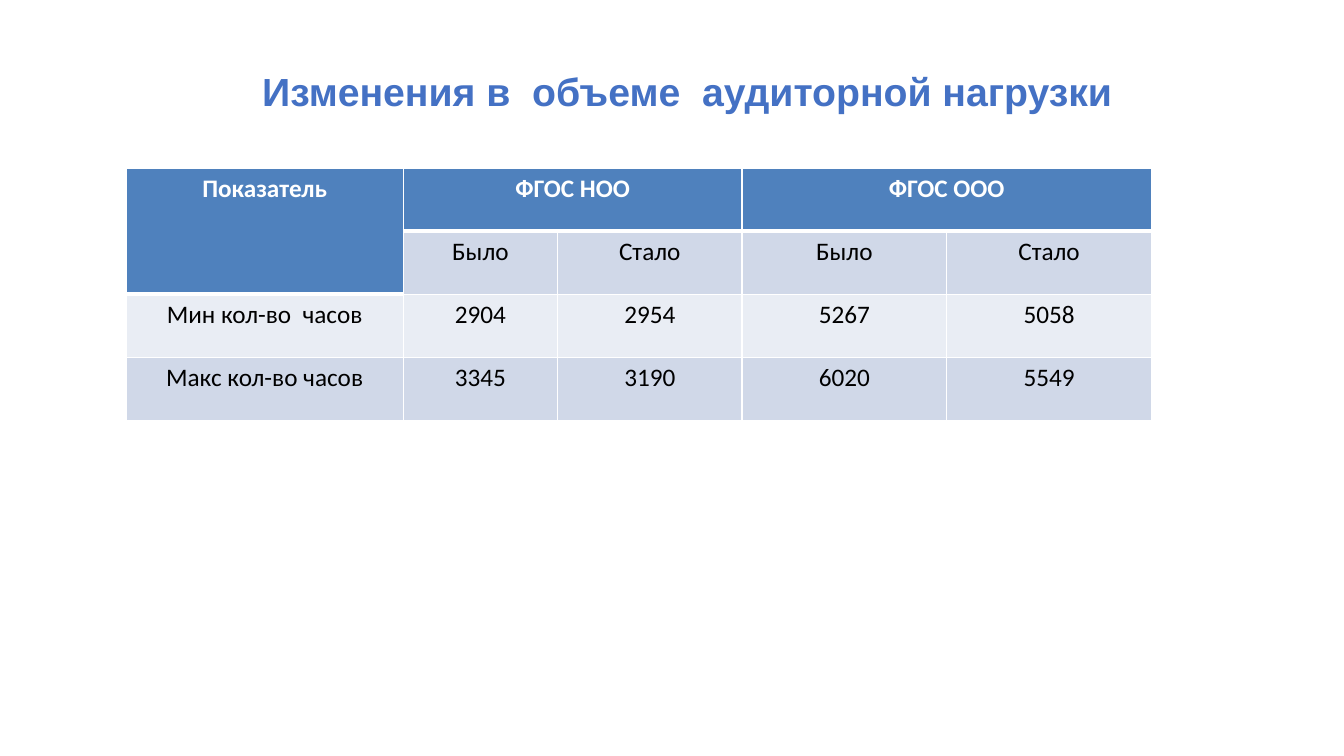
from dataclasses import dataclass

from lxml import etree
from pptx import Presentation
from pptx.dml.color import RGBColor
from pptx.enum.text import PP_ALIGN
from pptx.oxml.ns import qn
from pptx.util import Inches, Pt

CENTER = PP_ALIGN.CENTER


@dataclass(frozen=True)
class Theme:
    title_font: str = "Arial"
    table_font: str = "Calibri"
    title_size: int = 28
    table_size: int = 18
    title_color: str = "4471C4"
    header_fill: str = "4F81BD"
    header_text: str = "FFFFFF"
    body_text: str = "000000"
    band_fills: tuple = ("E9EDF4", "D0D8E8")
    border_color: str = "FFFFFF"
    border_width: int = 1
    header_border_width: int = 3


THEME = Theme()

TITLE = "Изменения в  объеме  аудиторной нагрузки"
COLUMN_WIDTHS = (2.75, 1.53, 1.83, 2.03, 2.03)
ROW_HEIGHT = 0.625
ROWS = (
    ("Показатель", "ФГОС НОО", "", "ФГОС ООО", ""),
    ("", "Было", "Стало", "Было", "Стало"),
    ("Мин кол-во  часов", "2904", "2954", "5267", "5058"),
    ("Макс кол-во часов", "3345", "3190", "6020", "5549"),
)
# First and last cell of each merged header block
MERGES = (((0, 0), (1, 0)), ((0, 1), (0, 2)), ((0, 3), (0, 4)))


def style_paragraph(paragraph, font_name, size, color, bold):
    paragraph.alignment = CENTER
    for run in paragraph.runs:
        run.font.name = font_name
        run.font.size = Pt(size)
        run.font.bold = bold
        run.font.color.rgb = RGBColor.from_string(color)


def add_title(slide, left, top, width, height):
    box = slide.shapes.add_textbox(Inches(left), Inches(top), Inches(width), Inches(height))
    frame = box.text_frame
    frame.word_wrap = True
    frame.margin_left = frame.margin_right = frame.margin_top = frame.margin_bottom = 0
    frame.text = TITLE
    style_paragraph(frame.paragraphs[0], THEME.title_font, THEME.title_size,
                    THEME.title_color, True)


def set_borders(cell, top, bottom):
    """Draw the four cell borders; top and bottom widths are in points."""
    properties = cell._tc.get_or_add_tcPr()
    widths = {"a:lnL": THEME.border_width, "a:lnR": THEME.border_width,
              "a:lnT": top, "a:lnB": bottom}
    for index, (tag, width) in enumerate(widths.items()):
        line = etree.Element(qn(tag), w=str(Pt(width)))
        fill = etree.SubElement(line, qn("a:solidFill"))
        etree.SubElement(fill, qn("a:srgbClr"), val=THEME.border_color)
        properties.insert(index, line)


def is_header(row, column):
    return row == 0 or (row == 1 and column == 0)


def style_cell(cell, row, column):
    header = is_header(row, column)
    cell.fill.solid()
    cell.fill.fore_color.rgb = RGBColor.from_string(
        THEME.header_fill if header else THEME.band_fills[row % 2])
    below_header = not header and is_header(row - 1, column)
    set_borders(cell,
                THEME.header_border_width if below_header else THEME.border_width,
                THEME.header_border_width if header else THEME.border_width)
    style_paragraph(cell.text_frame.paragraphs[0], THEME.table_font, THEME.table_size,
                    THEME.header_text if header else THEME.body_text, header)


def add_hours_table(slide, left, top):
    frame = slide.shapes.add_table(
        len(ROWS), len(COLUMN_WIDTHS), Inches(left), Inches(top),
        Inches(sum(COLUMN_WIDTHS)), Inches(ROW_HEIGHT * len(ROWS)))
    table = frame.table
    for column, width in zip(table.columns, COLUMN_WIDTHS):
        column.width = Inches(width)
    for row in table.rows:
        row.height = Inches(ROW_HEIGHT)
    for row_index, texts in enumerate(ROWS):
        for column_index, text in enumerate(texts):
            cell = table.cell(row_index, column_index)
            cell.text_frame.text = text
            style_cell(cell, row_index, column_index)
    for first, last in MERGES:
        table.cell(*first).merge(table.cell(*last))


def main():
    presentation = Presentation()
    presentation.slide_width = Inches(13.33)
    presentation.slide_height = Inches(7.5)
    slide = presentation.slides.add_slide(presentation.slide_layouts[6])
    add_title(slide, 1.42, 0.67, 10.79, 0.47)
    add_hours_table(slide, 1.25, 1.67)
    presentation.save("out.pptx")


if __name__ == "__main__":
    main()
